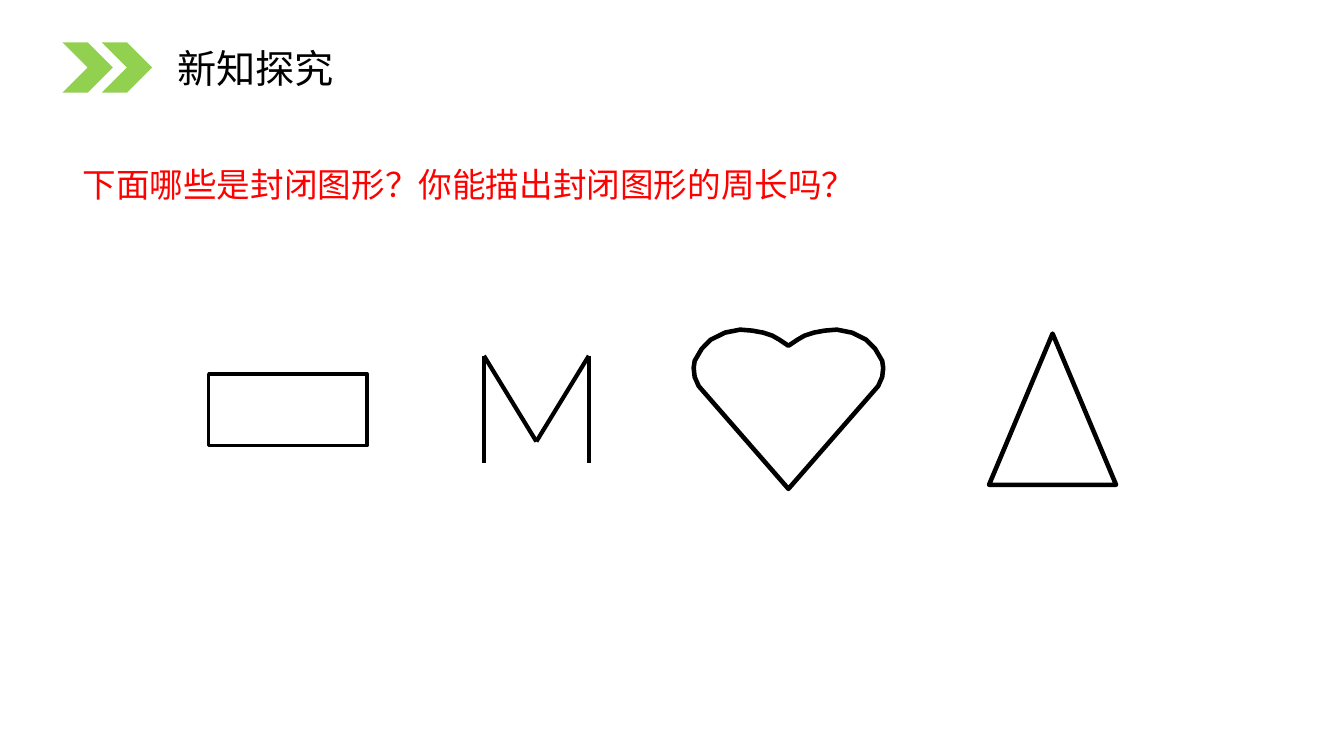
from itertools import pairwise
from pptx import Presentation
from pptx import util as u
from pptx.dml.color import RGBColor
from pptx.enum import shapes as s, text as t
from pptx.oxml.ns import qn
from lxml import etree

BLACK = RGBColor(0, 0, 0)
RED = RGBColor(255, 0, 0)
GREEN = RGBColor(0x92, 0xD0, 0x50)

TITLE = "新知探究"
ASK = "下面哪些是封闭图形？你能描出封闭图形的周长吗？"
CHEVRONS = [0.62, 1.01]
OUTLINES = [
    (s.MSO_SHAPE.RECTANGLE, (2.07, 3.71, 1.57, 0.71), 2.5),
    (s.MSO_SHAPE.ISOSCELES_TRIANGLE, (9.81, 3.31, 1.26, 1.5), 3.25),
]
ZIGZAG = [(4.8, 4.59), (4.8, 3.53), (5.32, 4.38), (5.84, 3.53), (5.84, 4.59)]
# Right half of the heart, from the notch to the tip, as offsets from its axis
AXIS = 7.82
HALF = [(0, 3.43), (0.09, 3.37), (0.16, 3.33), (0.25, 3.3), (0.36, 3.28),
        (0.48, 3.27), (0.63, 3.3), (0.77, 3.37), (0.86, 3.46), (0.93, 3.58),
        (0.94, 3.65), (0.93, 3.74), (0.89, 3.83), (0, 4.85)]

deck = Presentation()
deck.slide_width, deck.slide_height = u.Inches(13.33), u.Inches(7.5)
slide = deck.slides.add_slide(deck.slide_layouts[5])
parts = slide.shapes


def inch(nums):
    return [u.Inches(n) for n in nums]


def style(shape, fill=None, width=None):
    shape.shadow.inherit = False
    if fill is None:
        shape.fill.background()
    else:
        shape.fill.solid()
        shape.fill.fore_color.rgb = fill
    if width is None:
        shape.line.fill.background()
    else:
        shape.line.color.rgb = BLACK
        shape.line.width = u.Pt(width)


def write(shape, words, box, size, color):
    shape.left, shape.top, shape.width, shape.height = inch(box)
    frame = shape.text_frame
    frame.word_wrap = True
    frame.auto_size = t.MSO_AUTO_SIZE.NONE
    frame.vertical_anchor = t.MSO_ANCHOR.MIDDLE
    para = frame.paragraphs[0]
    para.alignment = t.PP_ALIGN.LEFT
    run = para.add_run()
    run.text = words
    run.font.name, run.font.size = "Arial", u.Pt(size)
    run.font.color.rgb = color


for left in CHEVRONS:
    style(parts.add_shape(s.MSO_SHAPE.CHEVRON, *inch((left, 0.42, 0.5, 0.5))),
          fill=GREEN)

for kind, box, width in OUTLINES:
    style(parts.add_shape(kind, *inch(box)), width=width)

left_half = [(-x, y) for x, y in reversed(HALF[1:-1])]
heart = [inch((AXIS + x, y)) for x, y in HALF + left_half]
pen = parts.build_freeform(*heart[0])
pen.add_line_segments(heart[1:], close=True)
style(pen.convert_to_shape(), width=3.25)

for start, end in pairwise(ZIGZAG):
    line = parts.add_connector(s.MSO_CONNECTOR.STRAIGHT, *inch(start + end))
    line.line.color.rgb = BLACK
    line.line.width = u.Pt(3)
    etree.SubElement(line.element.spPr, qn("a:effectLst"))

write(parts.title, TITLE, (1.66, 0.44, 5.59, 0.46), 28, BLACK)
ask_box = (0.72, 1.58, 9.02, 0.5)
write(parts.add_textbox(*inch(ask_box)), ASK, ask_box, 24, RED)

deck.save("out.pptx")
